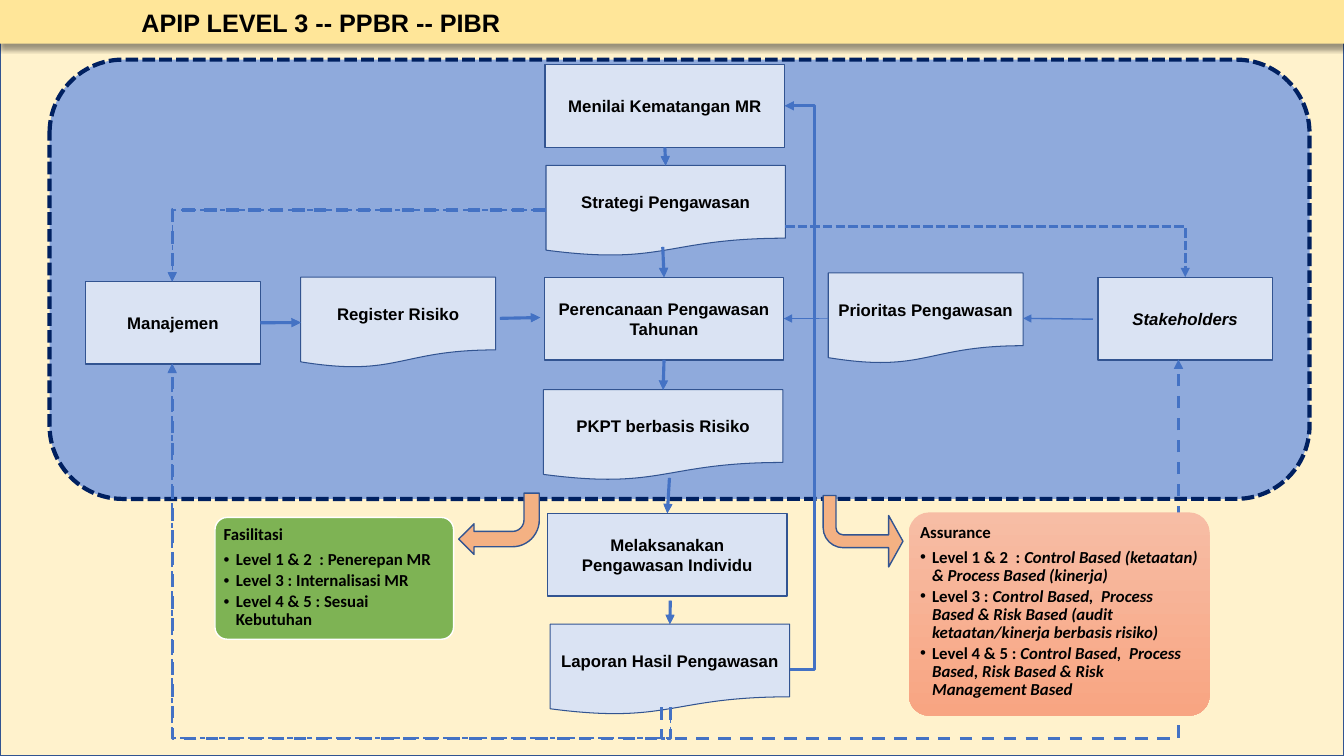
from dataclasses import dataclass

from lxml.etree import SubElement
from pptx import Presentation
from pptx.dml.color import RGBColor
from pptx.enum.dml import MSO_LINE as Dash
from pptx.enum.shapes import MSO_CONNECTOR as Link, MSO_SHAPE as Shape
from pptx.enum.text import MSO_ANCHOR as Anchor, MSO_AUTO_SIZE as Fit, PP_ALIGN as Align
from pptx.oxml.ns import qn
from pptx.util import Emu, Inches, Pt

COLUMNS, ROWS = 160, 90
TOP, LEFT, BOTTOM, RIGHT = range(4)


@dataclass(frozen=True)
class Theme:
    backdrop: str = "FFF2CC"
    header: str = "FFE699"
    panel: str = "8FAADC"
    panel_edge: str = "002060"
    node: str = "DAE3F3"
    edge: str = "325491"
    arrow: str = "4472C4"
    block_arrow: str = "F4B183"
    green: str = "70AD47"
    salmon: tuple = ("F7BDA5", "F8A582")
    white: str = "FFFFFF"
    ink: str = "000000"
    font: str = "Arial"
    list_font: str = "Calibri"
    title_size: int = 18
    text_size: int = 12


class FlowPage:
    """Draws on one slide; lengths are columns and rows of the grid."""

    def __init__(self, deck, theme):
        self.deck, self.theme = deck, theme
        self.page = deck.slides.add_slide(deck.slide_layouts[3])
        self.nodes = {}

    def x(self, columns):
        return Emu(round(self.deck.slide_width * columns / COLUMNS))

    def y(self, rows):
        return Emu(round(self.deck.slide_height * rows / ROWS))

    def frame(self, left, top, width, height):
        return self.x(left), self.y(top), self.x(width), self.y(height)

    def style(self, font, name, size):
        font.name, font.size, font.bold = name, Pt(size), True
        font.color.rgb = RGBColor.from_string(self.theme.ink)

    def box(self, kind, place, fill, edge=None, weight=1.0, dash=None):
        box = self.page.shapes.add_shape(kind, *self.frame(*place))
        box.shadow.inherit = False
        if isinstance(fill, tuple):
            box.fill.gradient()
            box.fill.gradient_angle = 270
            for stop, color in zip(box.fill.gradient_stops, fill):
                stop.color.rgb = RGBColor.from_string(color)
        else:
            box.fill.solid()
            box.fill.fore_color.rgb = RGBColor.from_string(fill)
        if edge:
            box.line.color.rgb = RGBColor.from_string(edge)
            box.line.width = Pt(weight)
            box.line.dash_style = dash
        else:
            box.line.fill.background()
        return box

    def node(self, text, kind, place, italic=None):
        weight = 0.75 if kind == Shape.FLOWCHART_DOCUMENT else 1
        box = self.box(kind, place, self.theme.node, self.theme.edge, weight)
        box.text_frame.vertical_anchor = Anchor.MIDDLE
        para = box.text_frame.paragraphs[0]
        para.text, para.alignment = text, Align.CENTER
        self.style(para.font, self.theme.font, self.theme.text_size)
        para.font.italic = italic
        self.nodes[text] = box

    def placeholder(self, index, place, margins):
        """Move a template placeholder to the front and to its place."""
        box = self.page.placeholders[index]
        box.element.getparent().append(box.element)
        box.left, box.top, box.width, box.height = self.frame(*place)
        text = box.text_frame
        text.word_wrap, text.auto_size, text.vertical_anchor = True, Fit.NONE, Anchor.TOP
        text.margin_left = text.margin_right = Inches(margins[0])
        text.margin_top = text.margin_bottom = Inches(margins[1])
        return text

    def header(self, title):
        bar = self.box(Shape.RECTANGLE, (0, 0, COLUMNS, 5.2), self.theme.header)
        effects = bar.element.spPr.find(qn("a:effectLst"))
        shadow = SubElement(effects, qn("a:outerShdw"), blurRad=str(Pt(4)),
                            dist=str(Pt(3)), dir="5400000", rotWithShape="0")
        color = SubElement(shadow, qn("a:srgbClr"), val=self.theme.ink)
        SubElement(color, qn("a:alpha"), val="40000")
        para = self.placeholder(0, (6.1, 0.4, 64.2, 4.6), (0.08, 0.04)).paragraphs[0]
        para.text, para.alignment = title, Align.CENTER
        self.style(para.font, self.theme.font, self.theme.title_size)

    def card(self, index, place, heading, items, fill, edge=None, opacity=None):
        left, top, width, height = place
        card = self.box(Shape.ROUNDED_RECTANGLE, place, fill, edge)
        card.adjustments[0] = 0.1
        if opacity:
            color = card.element.spPr.find(".//" + qn("a:srgbClr"))
            SubElement(color, qn("a:alpha"), val=str(opacity * 1000))
        pad = 0.03 * height
        inner = (left + pad, top + pad, width - 2 * pad, height - 2 * pad)
        text = self.placeholder(index, inner, (0.05, 0.05))
        for number, (label, detail) in enumerate([(heading, ""), *items]):
            para = text.add_paragraph() if number else text.paragraphs[0]
            para.line_spacing, para.space_before = 0.9, Pt(0)
            para.space_after = Pt(2 if number else 5)
            para.level = 1 if number else 0
            indent = Inches(0.12) if number else 0
            props = para._p.get_or_add_pPr()
            props.set("marL", str(indent))
            props.set("indent", str(-indent))
            if number:
                SubElement(props, qn("a:buChar"), char="•")
            else:
                SubElement(props, qn("a:buNone"))
            self.style(para.font, self.theme.list_font, self.theme.text_size)
            para.add_run().text = label
            if detail:
                span = para.add_run()
                span.text, span.font.italic = detail, True

    def finish_line(self, line, weight, dash=None):
        line.line.color.rgb = RGBColor.from_string(self.theme.arrow)
        line.line.width = Pt(weight)
        line.line.dash_style = dash
        props = line.element.spPr
        SubElement(props.find(qn("a:ln")), qn("a:tailEnd"), type="triangle")
        SubElement(props, qn("a:effectLst"))

    def arrow(self, begin, end, weight):
        """Each end is a grid point or a (node name, side) pair."""
        joins = [isinstance(point[0], str) for point in (begin, end)]
        points = [(0, 0) if join else (self.x(point[0]), self.y(point[1]))
                  for join, point in zip(joins, (begin, end))]
        line = self.page.shapes.add_connector(Link.STRAIGHT, *points[0], *points[1])
        if joins[0]:
            line.begin_connect(self.nodes[begin[0]], begin[1])
        if joins[1]:
            line.end_connect(self.nodes[end[0]], end[1])
        self.finish_line(line, weight)

    def elbow(self, begin, end, weight, dash=None, turn=0, flips="", bend=None):
        """Bent arrow; bend is the share of its length where the middle leg lies."""
        x1, x2, y1, y2 = self.x(begin[0]), self.x(end[0]), self.y(begin[1]), self.y(end[1])
        width, height = abs(x2 - x1), abs(y2 - y1)
        if turn == 90:
            width, height = height, width
        left, top = (x1 + x2 - width) // 2, (y1 + y2 - height) // 2
        line = self.page.shapes.add_connector(Link.ELBOW, left, top, left + width, top + height)
        props = line.element.spPr
        xfrm, shape = props.find(qn("a:xfrm")), props.find(qn("a:prstGeom"))
        xfrm.set("rot", str(turn * 60000))
        for flip in flips:
            xfrm.set("flip" + flip.upper(), "1")
        if bend is None:
            shape.set("prst", "bentConnector2")
        else:
            SubElement(shape.find(qn("a:avLst")), qn("a:gd"), name="adj1",
                       fmla=f"val {round(bend * 100000)}")
        self.finish_line(line, weight, dash)


def main():
    deck, theme = Presentation(), Theme()
    deck.slide_width, deck.slide_height = Inches(13.33), Inches(7.5)
    flow = FlowPage(deck, theme)
    flow.box(Shape.RECTANGLE, (0, 0, COLUMNS, ROWS), theme.backdrop, theme.edge)
    flow.box(Shape.ROUNDED_RECTANGLE, (5.9, 7.1, 150, 52.3), theme.panel,
             theme.panel_edge, 3, Dash.SQUARE_DOT)

    process, document = (Shape.RECTANGLE, 9.85), (Shape.FLOWCHART_DOCUMENT, 10.8)
    assess, strategy, plan = ("Menilai Kematangan MR", "Strategi Pengawasan",
                              "Perencanaan Pengawasan Tahunan")
    program, perform, report = ("PKPT berbasis Risiko", "Melaksanakan Pengawasan Individu",
                                "Laporan Hasil Pengawasan")
    manager, register, priority, holders = ("Manajemen", "Register Risiko",
                                            "Prioritas Pengawasan", "Stakeholders")
    for text, (kind, height), left, top, width in (
            (assess, process, 64.9, 7.7, 28.5), (strategy, document, 65, 19.7, 28.5),
            (plan, process, 64.8, 33, 28.5), (program, document, 64.7, 46.4, 28.5),
            (perform, process, 65.2, 61.1, 28.5), (report, document, 65.5, 74.3, 28.5),
            (manager, process, 10.2, 33.5, 20.8), (register, document, 35.8, 33, 23.2),
            (priority, document, 98.6, 32.5, 23.2), (holders, process, 130.7, 33, 20.8)):
        flow.node(text, kind, (left, top, width, height), text == holders or None)

    flow.header("APIP LEVEL 3 -- PPBR -- PIBR")
    flow.arrow((priority, LEFT), (plan, RIGHT), 0.5)
    flow.arrow((130.1, 38), (priority, RIGHT), 1)
    flow.elbow((78.8, 84.2), (140.3, 42.8), 2.25, Dash.DASH, 90, "hv", -0.09)
    flow.elbow((93.5, 27), (141.1, 33), 2.25, Dash.SQUARE_DOT)
    flow.elbow((94, 79.7), (93.4, 12.6), 2.25, None, 0, "hv", -5)
    for thin, dashed in ((0.5, 1), (2.25, 2.25)):
        for begin, end in (
                ((assess, BOTTOM), (strategy, TOP)), ((78.9, 29.4), (plan, TOP)),
                ((plan, BOTTOM), (program, TOP)), ((79.7, 56.9), (perform, TOP)),
                ((79.8, 71.5), (report, TOP)), ((manager, RIGHT), (register, LEFT)),
                ((59.5, 37.9), (64.3, 37.8))):
            flow.arrow(begin, end, thin)
        flow.elbow((79.8, 84.2), (20.5, 43.3), dashed, Dash.DASH, 90, "h", -0.09)
        flow.elbow((65, 25), (20.5, 33.5), dashed, Dash.DASH, 180, "v")

    flow.card(1, (25.6, 61.6, 28.4, 14.5), "Fasilitasi", [
        ("Level 1 & 2  : Penerepan MR", ""), ("Level 3 : Internalisasi MR", ""),
        ("Level 4 & 5 : Sesuai Kebutuhan", "")], theme.green, theme.white, 90)
    flow.card(2, (108.2, 61, 35.8, 24.2), "Assurance", [
        ("Level 1 & 2  : ", "Control Based (ketaatan) & Process Based (kinerja)"),
        ("Level 3 : ", "Control Based,  Process Based & Risk Based "
                       "(audit ketaatan/kinerja berbasis risiko)"),
        ("Level 4 & 5 : ", "Control Based,  Process Based, Risk Based & "
                           "Risk Management Based")], theme.salmon)
    to_left = flow.box(Shape.BENT_ARROW, (54.6, 58.7, 9.6, 7.3), theme.block_arrow, theme.edge)
    to_left.rotation = 180
    to_right = flow.box(Shape.BENT_ARROW, (98, 59, 9.5, 8.5), theme.block_arrow, theme.edge)
    to_right.element.spPr.find(qn("a:xfrm")).set("flipV", "1")
    for index, value in enumerate((0.18, 0.36, 0.2, 0.28)):
        to_right.adjustments[index] = value
    deck.save("out.pptx")


if __name__ == "__main__":
    main()
